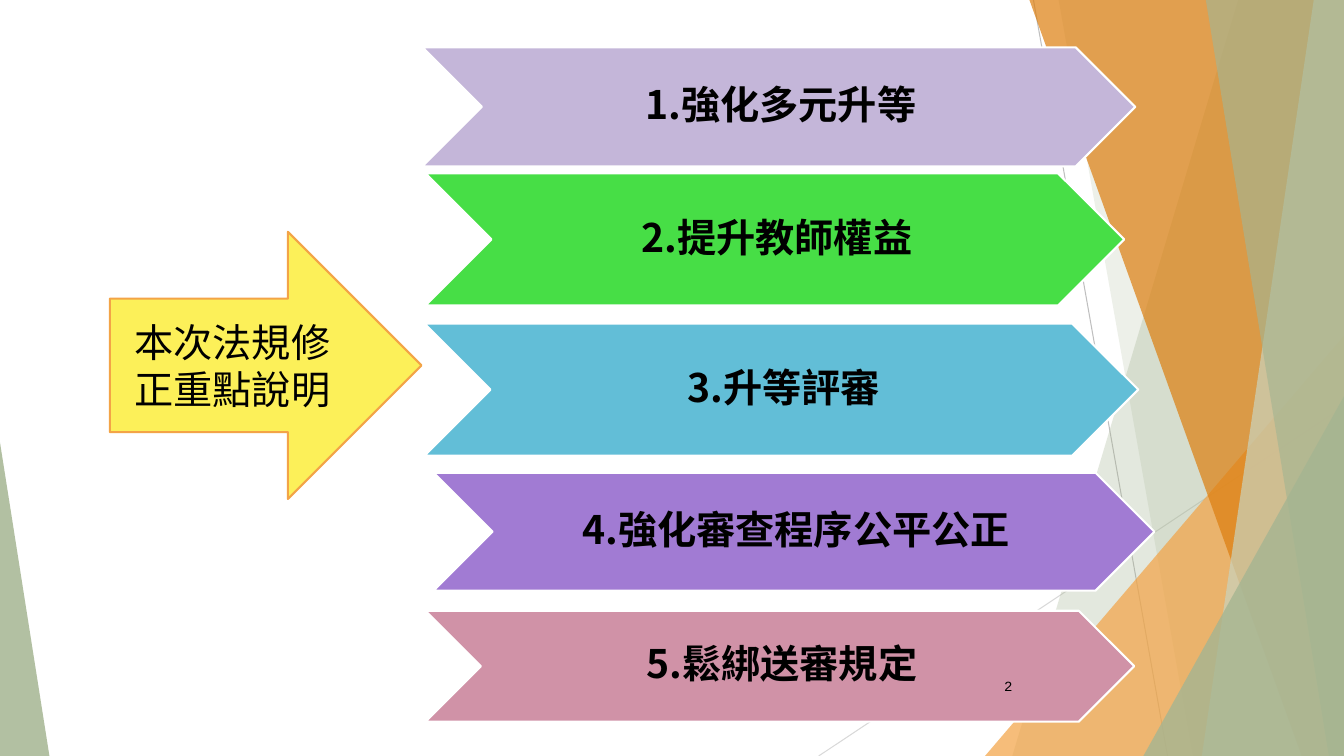
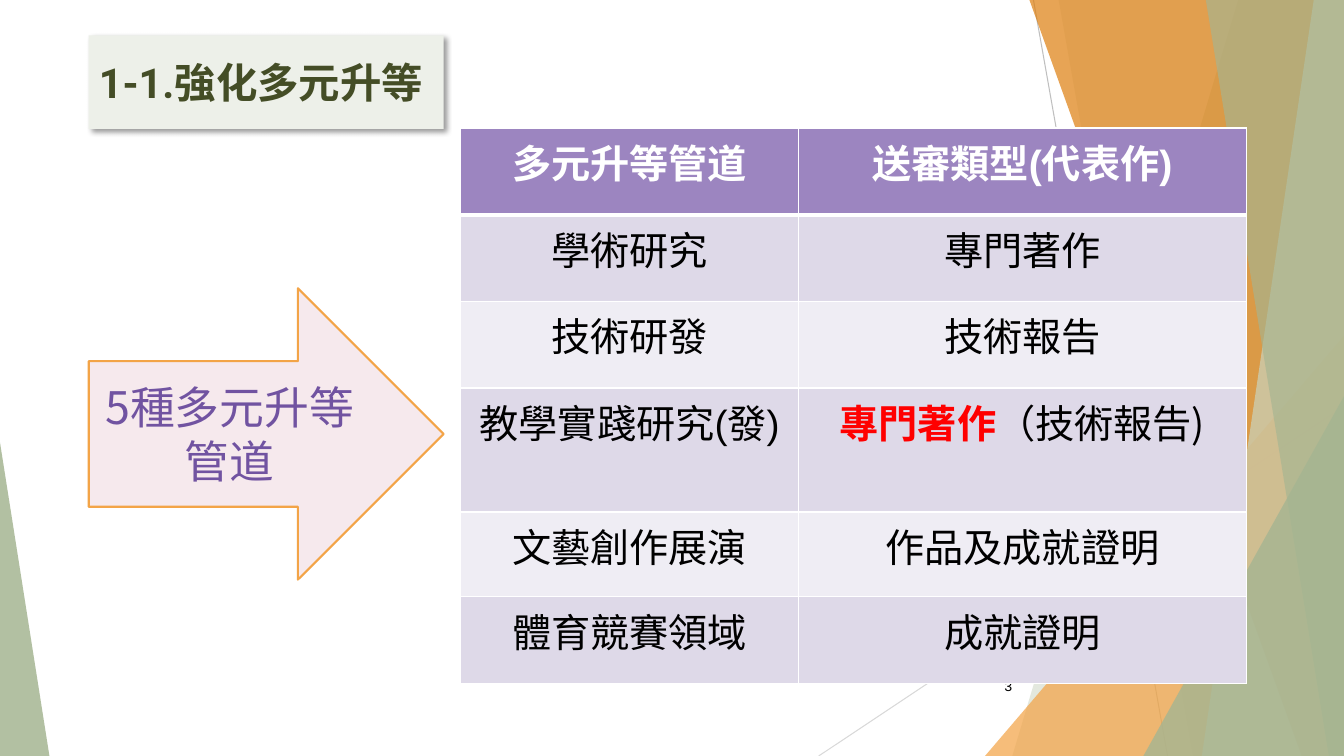
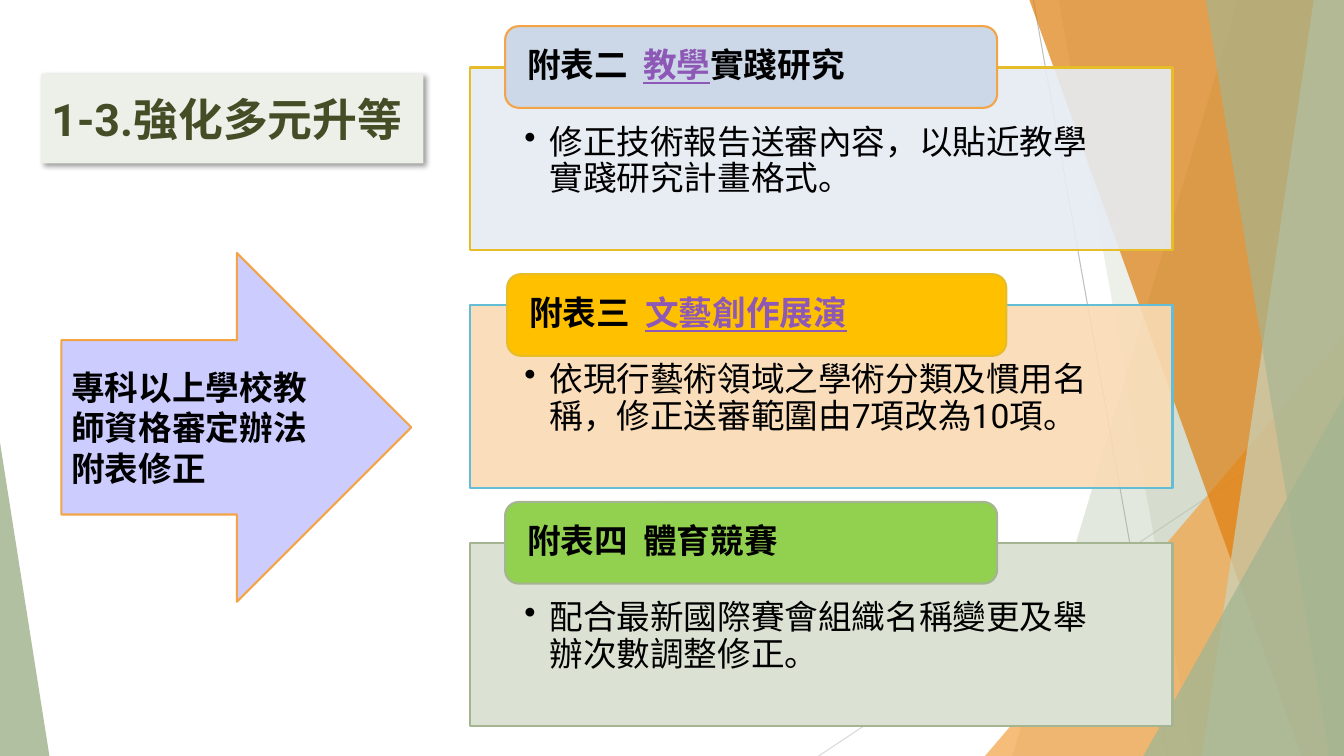
from lxml import etree
from pptx import Presentation
from pptx import util as u
from pptx.dml import color
from pptx.enum import shapes, text
from pptx.oxml import ns

WIDTH, HEIGHT = 13.33, 7.5
SANS, ROBOTO, CJK_SC, CJK_TC, CJK_JP = (
    "Arial", "Roboto", "Noto Sans CJK SC", "Noto Sans CJK TC", "Noto Sans CJK JP")
BLACK, WHITE, SAGE, ORANGE, LINK = "000000", "FFFFFF", "A5B592", "F3A447", "8E58B6"
LEFT, CENTER, RIGHT = text.PP_ALIGN.LEFT, text.PP_ALIGN.CENTER, text.PP_ALIGN.RIGHT
SHAPE = shapes.MSO_SHAPE


def rgb(value):
    return color.RGBColor.from_string(value)


def child(parent, tag, **attributes):
    """Add one XML child with the given attributes."""
    element = etree.SubElement(parent, ns.qn(tag))
    for name, value in attributes.items():
        element.set(name, str(value))
    return element


def paint(shape, fill, alpha=100, line=None, weight=1.5):
    """Set fill, transparency and outline, without a shadow."""
    shape.shadow.inherit = False
    shape.fill.solid()
    shape.fill.fore_color.rgb = rgb(fill)
    if alpha < 100:
        fill_color = shape.element.find(".//" + ns.qn("a:srgbClr"))
        child(fill_color, "a:alpha", val=alpha * 1000)
    if line:
        shape.line.color.rgb = rgb(line)
        shape.line.width = u.Pt(weight)
    else:
        shape.line.fill.background()


def write(frame, content, size=28, font=CJK_SC, ink=BLACK, bold=False, align=LEFT,
          anchor=text.MSO_ANCHOR.MIDDLE, insets=(0.1, 0.05, 0.1, 0.05),
          spacing=None, bullet=False, tab=None):
    """Write one paragraph: a string, or (text, overrides) pairs."""
    frame.word_wrap = True
    frame.vertical_anchor = anchor
    (frame.margin_left, frame.margin_top,
     frame.margin_right, frame.margin_bottom) = map(u.Inches, insets)
    paragraph = frame.paragraphs[0]
    paragraph.alignment = align
    if spacing:
        paragraph.line_spacing = spacing
    properties = paragraph._p.get_or_add_pPr()
    if bullet:
        properties.set("marL", str(u.Inches(0.25)))
        properties.set("indent", str(-u.Inches(0.25)))
        child(properties, "a:buChar", char="•")
    if tab:
        child(child(properties, "a:tabLst"), "a:tab", pos=u.Inches(tab), algn="l")
    for words, changes in [(content, {})] if isinstance(content, str) else content:
        style = {"font": font, "ink": ink, "bold": bold, "underline": False, **changes}
        run = paragraph.add_run()
        run.text = words
        run.font.size = u.Pt(size)
        run.font.name = style["font"]
        run.font.bold = style["bold"]
        run.font.underline = style["underline"]
        run.font.color.rgb = rgb(style["ink"])
        east_asian = style["font"] if "CJK" in style["font"] else CJK_TC
        child(run.font._element, "a:ea", typeface=east_asian)


class Deck:
    def __init__(self):
        self.presentation = Presentation()
        self.presentation.slide_width = u.Inches(WIDTH)
        self.presentation.slide_height = u.Inches(HEIGHT)
        self.slide = None

    def new_slide(self, title=None, box=None, size=32):
        layout = self.presentation.slide_layouts[5 if title else 6]
        first = self.slide is None
        self.slide = self.presentation.slides.add_slide(layout)
        if first:
            self.backdrop()
        if title:
            self.title(title, box, size)

    def title(self, words, box, size):
        shape = self.slide.shapes.title
        shape.left, shape.top, shape.width, shape.height = map(u.Inches, box)
        shape.fill.solid()
        shape.fill.fore_color.rgb = rgb("EDF0E9")
        write(shape.text_frame, words, size=size, font=ROBOTO, ink="444D26",
              bold=True, insets=(0.1, 0.05, 0, 0.05))
        effects = child(shape.element.spPr, "a:effectLst")
        shadow = child(effects, "a:outerShdw", blurRad=u.Pt(4), dist=u.Pt(3),
                       dir=45 * 60000, algn="tl", rotWithShape=0)
        child(child(shadow, "a:srgbClr", val=BLACK), "a:alpha", val=40000)

    def shape(self, kind, box, fill, content=None, alpha=100, line=None, **style):
        shape = self.slide.shapes.add_shape(kind, *map(u.Inches, box))
        paint(shape, fill, alpha, line)
        if content:
            write(shape.text_frame, content, **style)
        return shape

    def arrow(self, box, fill, words, **style):
        self.shape(SHAPE.RIGHT_ARROW, box, fill, words, line=ORANGE, font=CJK_JP, **style)

    def number(self, value):
        box = self.slide.shapes.add_textbox(*map(u.Inches, (9.39, 6.61, 0.75, 0.4)))
        write(box.text_frame, str(value), size=10, font="Courier New", align=RIGHT)

    def line(self, start, end, ink):
        points = map(u.Inches, (*start, *end))
        connector = self.slide.shapes.add_connector(shapes.MSO_CONNECTOR.STRAIGHT, *points)
        connector.line.color.rgb = rgb(ink)
        connector.line.width = u.Pt(0.75)
        child(connector.element.spPr, "a:effectLst")

    def band(self, top_x, bottom_x, fill, alpha):
        """Slanted band that reaches the right edge of the slide."""
        corners = [(top_x, 0), (WIDTH, 0), (WIDTH, HEIGHT), (bottom_x, HEIGHT)]
        points = [(u.Inches(x), u.Inches(y)) for x, y in corners]
        builder = self.slide.shapes.build_freeform(*points[0])
        builder.add_line_segments(points[1:])
        paint(builder.convert_to_shape(), fill, alpha)

    def triangle(self, left, top, width, fill, alpha, apex):
        box = (left, top, width, HEIGHT - top)
        shape = self.shape(SHAPE.ISOSCELES_TRIANGLE, box, fill, alpha=alpha)
        shape.adjustments[0] = apex

    def backdrop(self):
        """Draw the shared decoration and move it to the slide master."""
        self.line((10.25, 0), (11.58, HEIGHT), "BFBFBF")
        self.line((WIDTH, 4.03), (8.12, HEIGHT), "D9D9D9")
        self.band(12.28, 10.04, SAGE, 30)
        self.band(10.5, 11.83, SAGE, 20)
        self.triangle(9.77, 3.33, 3.56, ORANGE, 72, apex=1)
        self.band(10.21, 12.91, "DD7E0E", 70)
        self.band(13.03, 11.92, "C9D3BE", 70)
        self.band(11.96, 13.18, SAGE, 65)
        self.triangle(11.34, 3.93, 1.99, SAGE, 80, apex=1)
        self.triangle(0, 4.39, 0.49, SAGE, 85, apex=0)
        master_tree = self.presentation.slide_master.shapes.element
        for index, shape in enumerate(list(self.slide.shapes)):
            shape.element.find(".//" + ns.qn("p:cNvPr")).set("id", str(100 + index))
            master_tree.append(shape.element)

    def table(self, left, top, widths, heights, rows):
        frame = self.slide.shapes.add_table(
            len(rows), len(widths), u.Inches(left), u.Inches(top),
            u.Inches(sum(widths)), u.Inches(sum(heights)))
        table = frame.table
        for column, width in zip(table.columns, widths):
            column.width = u.Inches(width)
        for row, height in zip(table.rows, heights):
            row.height = u.Inches(height)
        for row_index, row in enumerate(rows):
            header = row_index == 0
            fill = "9C85C0" if header else ("EFEDF4", "DED9E8")[row_index % 2]
            for column_index, content in enumerate(row):
                cell = table.cell(row_index, column_index)
                if header:
                    # Thick rule below the header; borders come before the fill
                    properties = cell._tc.get_or_add_tcPr()
                    border = child(properties, "a:lnB", w=u.Pt(3))
                    child(child(border, "a:solidFill"), "a:srgbClr", val=WHITE)
                cell.fill.solid()
                cell.fill.fore_color.rgb = rgb(fill)
                write(cell.text_frame, content, font=SANS, align=CENTER, bold=header,
                      ink=WHITE if header else BLACK, anchor=text.MSO_ANCHOR.TOP)

    def card(self, top, fill, line, alpha, words, label_box, label_fill, label_line, label):
        self.shape(SHAPE.RECTANGLE, (4.66, top, 6.97, 1.81), fill, words, alpha=alpha,
                   line=line, size=24, font=ROBOTO, anchor=text.MSO_ANCHOR.TOP,
                   insets=(0.54, 0.57, 0.54, 0.19), spacing=0.9, bullet=True)
        self.shape(SHAPE.ROUNDED_RECTANGLE, label_box, label_fill, label, line=label_line,
                   size=24, font=ROBOTO, bold=True, insets=(0.18, 0, 0.18, 0),
                   spacing=0.9, tab=1.15)


def main():
    deck = Deck()

    # Overview of the five revisions
    deck.new_slide()
    revisions = [
        ((4.19, 0.47, 7.07, 1.18), "C4B6D9", "1.強化多元升等"),
        ((4.22, 1.72, 6.93, 1.31), "47DE46", "2.提升教師權益"),
        ((4.21, 3.21, 7.08, 1.31), "62BED7", "3.升等評審"),
        ((4.3, 4.69, 7.15, 1.17), "A17BD3", "4.強化審查程序公平公正"),
        ((4.22, 6.06, 7.03, 1.1), "D092A7", "5.鬆綁送審規定"),
    ]
    for box, fill, words in revisions:
        deck.shape(SHAPE.CHEVRON, box, fill, words, line=WHITE, bold=True, align=CENTER,
                   insets=(0.04, 0.02, 0, 0.02), spacing=0.9)
    deck.arrow((1.09, 2.3, 3.09, 2.65), "FCF059", "本次法規修正重點說明", align=CENTER)
    deck.number(2)

    # Promotion channels
    deck.new_slide("1-1.強化多元升等", (0.88, 0.35, 3.52, 0.93), size=29.6)
    deck.number(3)
    teaching_work = [
        ("專門著作", {"ink": "FF0000", "bold": True}),
        ("（", {"font": CJK_TC}),
        ("技術報告", {}),
        (")", {"font": CJK_SC}),
    ]
    deck.table(4.57, 1.27, [3.35, 4.44], [0.86, 0.86, 0.86, 1.23, 0.84, 0.86], [
        ("多元升等管道", "送審類型(代表作)"),
        ("學術研究", "專門著作"),
        ("技術研發", "技術報告"),
        ("教學實踐研究(發)", teaching_work),
        ("文藝創作展演", "作品及成就證明"),
        ("體育競賽領域", "成就證明"),
    ])
    deck.arrow((0.88, 2.86, 3.52, 2.89), "F6E9ED", "5種多元升等管道",
               size=32, ink="7153A1", align=CENTER)

    # Revised appendix tables
    deck.new_slide("1-3.強化多元升等", (0.41, 0.73, 3.79, 0.89))
    linked = {"ink": LINK, "underline": True}
    cards = [
        ("E6ECF3", "E7BC29", 90, "修正技術報告送審內容，以貼近教學實踐研究計畫格式。",
         (5.01, 0.26, 4.88, 0.81), "CCD8E7", ORANGE,
         [("附表二\t", {}), ("教學", linked), ("實踐研究", {})]),
        ("FADBB5", "62BED7", 90, "依現行藝術領域之學術分類及慣用名稱，修正送審範圍由7項改為10項。",
         (5.03, 2.72, 4.95, 0.81), "FFC000", "E7BC29",
         [("附表三\t", {}), ("文藝創作展演", linked)]),
        ("DBE1D3", SAGE, 100, "配合最新國際賽會組織名稱變更及舉辦次數調整修正。",
         (5.01, 4.98, 4.88, 0.81), "92D050", SAGE, "附表四\t體育競賽"),
    ]
    for index, card in enumerate(cards):
        deck.card(0.67 + 2.36 * index, *card)
    deck.arrow((0.61, 2.51, 3.47, 3.46), "CCCCFF", "專科以上學校教師資格審定辦法附表修正",
               size=24, bold=True)

    deck.presentation.save("out.pptx")


if __name__ == "__main__":
    main()
